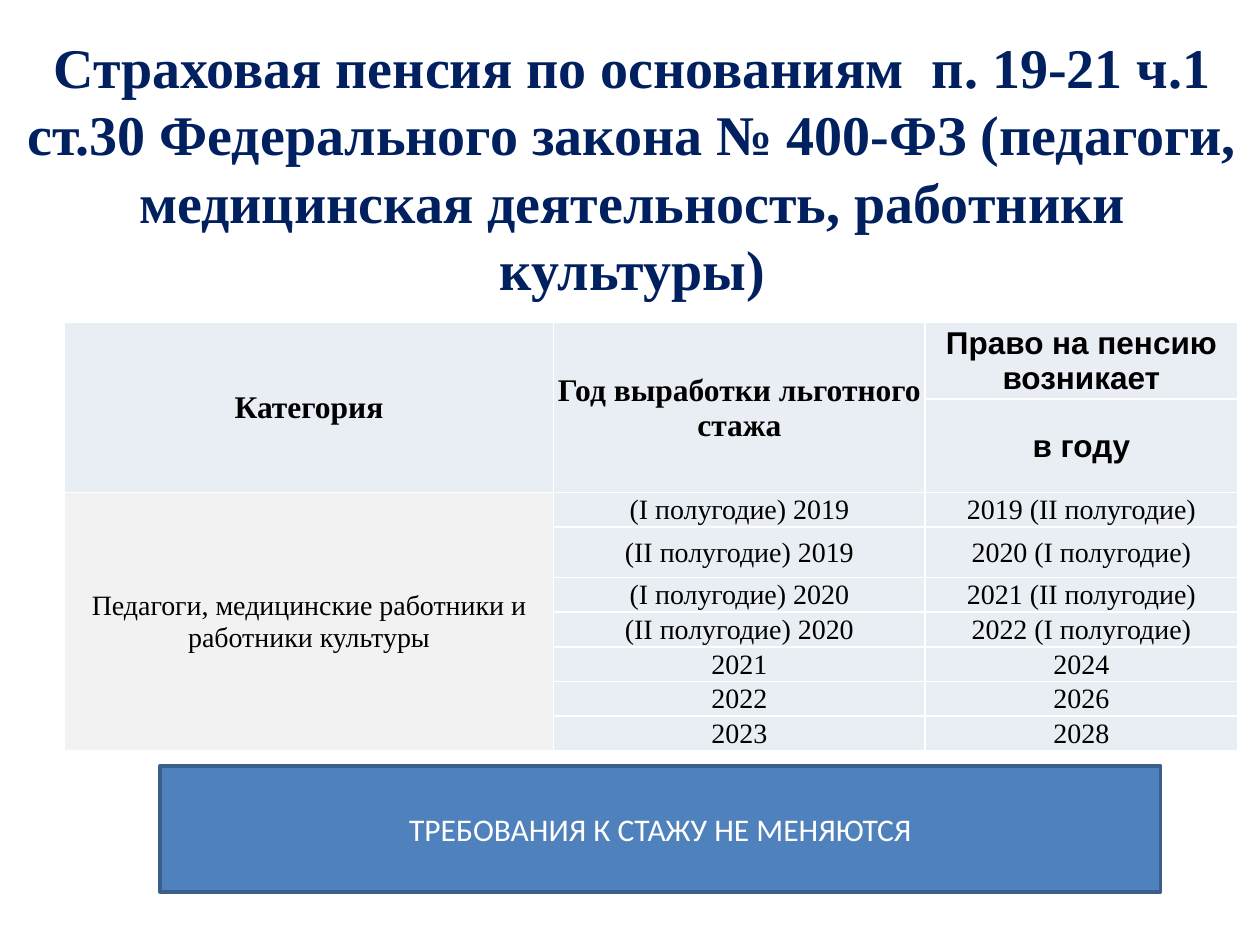
from pptx import Presentation
from pptx.dml.color import RGBColor
from pptx.enum import shapes, text
from pptx.util import Cm, Pt

SERIF = "Times New Roman"
PALE = "E9EDF4"
HEAD = ["Категория", "Год выработки льготного стажа", "Право на пенсию возникает"]
GROUP = "Педагоги, медицинские работники и работники культуры"
YEARS = [
    ("(I полугодие) 2019", "2019 (II полугодие)"),
    ("(II полугодие) 2019", "2020 (I полугодие)"),
    ("(I полугодие) 2020", "2021 (II полугодие)"),
    ("(II полугодие) 2020", "2022 (I полугодие)"),
    ("2021", "2024"),
    ("2022", "2026"),
    ("2023", "2028"),
]
WIDTHS = [9.86, 7.49, 6.3]
HEIGHTS = [1.32, 1.88, 0.56, 1.02] + [0.56] * 5


def tint(code):
    """Return the colour of a hex string."""
    return RGBColor.from_string(code)


def write(frame, words, size, face=SERIF, color="000000", bold=False):
    """Put one centred, formatted paragraph into a text frame."""
    frame.text = words
    frame.word_wrap = True
    para = frame.paragraphs[0]
    para.alignment = text.PP_ALIGN.CENTER
    font = para.runs[0].font
    font.size, font.name, font.bold = Pt(size), face, bold
    font.color.rgb = tint(color)


def put_title(slide, words):
    """Place and format the title."""
    title = slide.shapes.title
    title.left, title.top = Cm(0.05), Cm(0.53)
    title.width, title.height = Cm(25.4), Cm(5.74)
    write(title.text_frame, words, 32, color="002060", bold=True)
    title.text_frame.vertical_anchor = text.MSO_ANCHOR.TOP
    title.text_frame.auto_size = text.MSO_AUTO_SIZE.SHAPE_TO_FIT_TEXT


def fill_cell(cell, words, size=16, fill=PALE, **style):
    """Fill a table cell with colour and text."""
    cell.fill.solid()
    cell.fill.fore_color.rgb = tint(fill)
    cell.margin_left = cell.margin_right = cell.margin_top = Cm(0.02)
    cell.margin_bottom = 0
    cell.vertical_anchor = text.MSO_ANCHOR.MIDDLE
    write(cell.text_frame, words, size, **style)


def add_grid(slide):
    """Add the table of qualifying years and pension years."""
    frame = slide.shapes.add_table(
        len(HEIGHTS), len(WIDTHS), Cm(1.3), Cm(6.5), Cm(sum(WIDTHS)), Cm(sum(HEIGHTS)))
    grid = frame.table
    grid.first_row = grid.horz_banding = False
    for col, width in zip(grid.columns, WIDTHS):
        col.width = Cm(width)
    for row, height in zip(grid.rows, HEIGHTS):
        row.height = Cm(height)
    for col in (0, 1):
        grid.cell(0, col).merge(grid.cell(1, col))
    grid.cell(2, 0).merge(grid.cell(len(HEIGHTS) - 1, 0))

    for col, words in enumerate(HEAD):
        face = "Arial" if col == 2 else SERIF
        fill_cell(grid.cell(0, col), words, 18, face=face, bold=True)
    fill_cell(grid.cell(1, 2), "в году", 18, face="Arial", bold=True)
    fill_cell(grid.cell(2, 0), GROUP, fill="F2F2F2")
    for row, pair in enumerate(YEARS, 2):
        for col, words in enumerate(pair, 1):
            fill_cell(grid.cell(row, col), words)


def add_banner(slide, words):
    """Add the blue conclusion box."""
    box = slide.shapes.add_shape(
        shapes.MSO_SHAPE.RECTANGLE, Cm(3.23), Cm(15.44), Cm(20.17), Cm(2.54))
    box.shadow.inherit = False
    box.fill.solid()
    box.fill.fore_color.rgb = tint("4F81BD")
    box.line.color.rgb = tint("3A5F8C")
    box.line.width = Pt(2)
    box.text_frame.vertical_anchor = text.MSO_ANCHOR.MIDDLE
    write(box.text_frame, words, 18, face="Calibri", color="FFFFFF")


def main():
    """Build and save the slide."""
    deck = Presentation()
    deck.slide_width, deck.slide_height = Cm(25.4), Cm(19.05)
    slide = deck.slides.add_slide(deck.slide_layouts[5])
    put_title(slide, "Страховая пенсия по основаниям  п. 19-21 ч.1 ст.30 Федерального "
                     "закона № 400-ФЗ (педагоги, медицинская деятельность, работники культуры)")
    add_grid(slide)
    add_banner(slide, "ТРЕБОВАНИЯ К СТАЖУ НЕ МЕНЯЮТСЯ")
    deck.save("out.pptx")


if __name__ == "__main__":
    main()
